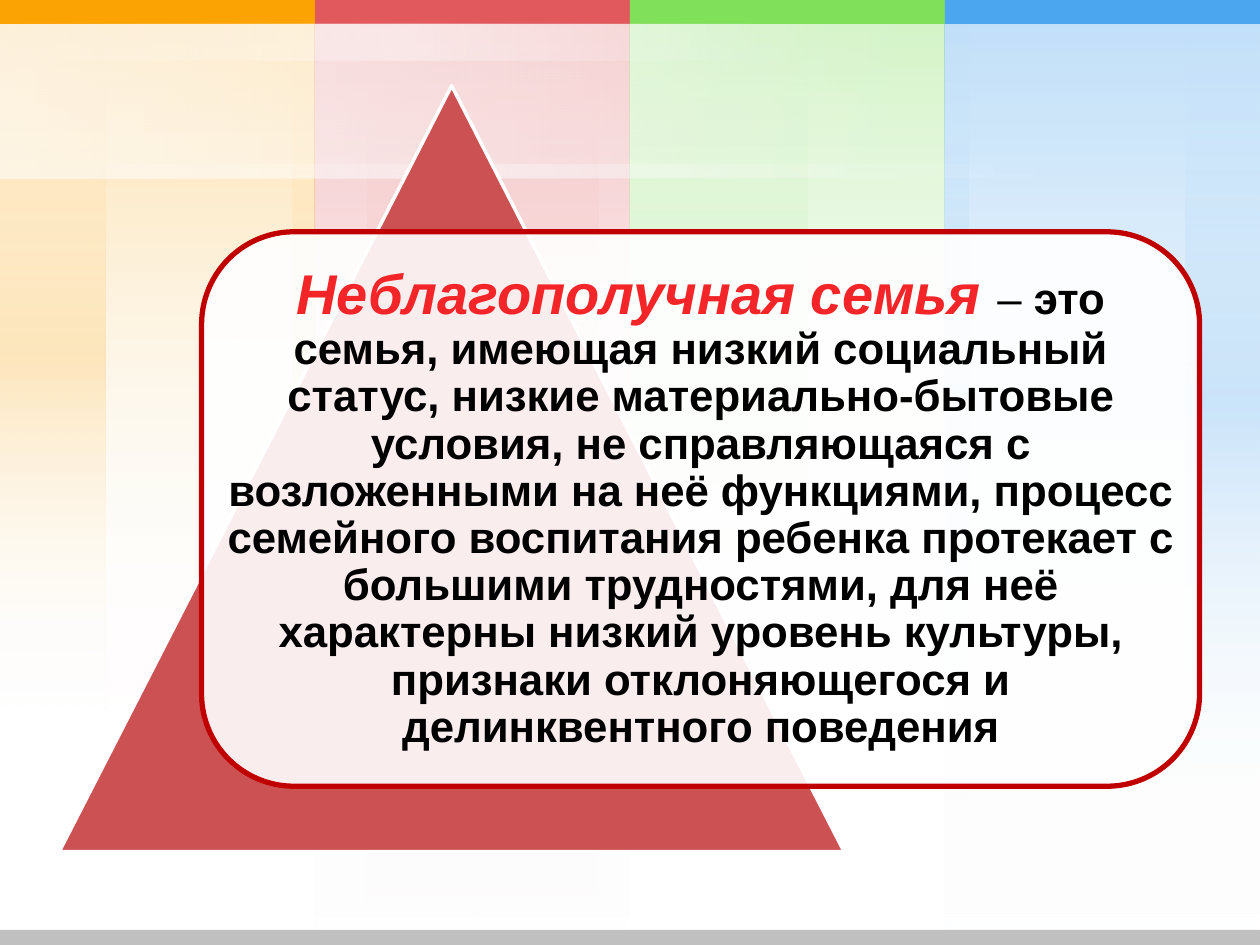
import pptx
import pptx.util
import pptx.oxml
import pptx.oxml.ns
import pptx.dml.color
import pptx.enum.shapes
import pptx.enum.text

Inches = pptx.util.Inches
Pt = pptx.util.Pt
RGBColor = pptx.dml.color.RGBColor
Shapes = pptx.enum.shapes.MSO_SHAPE

ORANGE = RGBColor(0xFC, 0xA3, 0x04)
ROSE = RGBColor(0xE1, 0x59, 0x5C)
GREEN = RGBColor(0x80, 0xE0, 0x5A)
BLUE = RGBColor(0x4B, 0xA5, 0xEF)
WHITE = RGBColor(0xFF, 0xFF, 0xFF)
GRAY = RGBColor(0xC0, 0xC0, 0xC0)
BRICK = RGBColor(0xCC, 0x51, 0x53)
DARK_RED = RGBColor(0xC0, 0x00, 0x00)
BRIGHT_RED = RGBColor(0xF3, 0x25, 0x28)
BLACK = RGBColor(0x00, 0x00, 0x00)

deck = pptx.Presentation()
deck.slide_width = Inches(10)
deck.slide_height = Inches(7.5)
page = deck.slides.add_slide(deck.slide_layouts[6])


def add_figure(kind, place, color, line=None, width=0):
    figure = page.shapes.add_shape(kind, *[Inches(value) for value in place])
    figure.shadow.inherit = False
    figure.fill.solid()
    figure.fill.fore_color.rgb = color
    if line is None:
        figure.line.fill.background()
    else:
        figure.line.color.rgb = line
        figure.line.width = Pt(width)
    return figure


def add_fade(place, color, alpha, middle=False, rotation=0):
    figure = add_figure(Shapes.RECTANGLE, place, color)
    figure.rotation = rotation
    stops = [(0, color, alpha), (100, WHITE, 0)]
    if middle:
        stops = [(0, WHITE, 0), (50, color, alpha), (100, WHITE, 0)]
    stop_xml = "".join(
        f'<a:gs pos="{position * 1000}"><a:srgbClr val="{shade}">'
        f'<a:alpha val="{opacity * 1000}"/></a:srgbClr></a:gs>'
        for position, shade, opacity in stops
    )
    gradient = pptx.oxml.parse_xml(
        f'<a:gradFill {pptx.oxml.ns.nsdecls("a")} rotWithShape="1">'
        f'<a:gsLst>{stop_xml}</a:gsLst><a:lin ang="5400000" scaled="0"/></a:gradFill>'
    )
    properties = figure.element.spPr
    properties.replace(properties.find(pptx.oxml.ns.qn("a:solidFill")), gradient)


column_fades = [
    (ROSE, 2.5, [(2.5, 2.5, 7.5, False), (2.92, 1.83, 7.5, True), (2.5, 2.5, 7.5, False)]),
    (GREEN, 5, [(5, 2.5, 5.62, False), (5, 1.41, 5.62, True), (5, 2.5, 5.62, False)]),
    (BLUE, 7.5, [(7.5, 0.19, 6.37, True), (7.5, 2.5, 7.47, False),
                 (9.41, 0.59, 6.37, True), (7.5, 2.5, 7.47, False)]),
    (ORANGE, 0, [(0, 2.5, 5.62, False), (2.32, 0.18, 5.62, True),
                 (0, 0.84, 5.62, True), (0, 2.5, 5.62, False)]),
]
for color, column_left, fades in column_fades:
    for left, width, height, middle in fades:
        add_fade((left, 0, width, height), color, 20, middle)

for color, column_left, fades in column_fades:
    add_figure(Shapes.RECTANGLE, (column_left, 0, 2.5, 0.19), color)

for place, middle in [
    ((4.16, -2.85, 0.1, 8.42), True),
    ((3.15, -2.95, 1.22, 7.51), False),
    ((3.06, -2.87, 0.29, 6.41), True),
    ((3.15, -2.95, 1.22, 7.51), False),
]:
    add_fade(place, WHITE, 35, middle, 270)

add_figure(Shapes.RECTANGLE, (0, 7.38, 10, 0.12), GRAY)
add_figure(Shapes.ISOSCELES_TRIANGLE, (0.47, 0.68, 6.23, 6.08), BRICK, WHITE, 2)

panel_place = (1.6, 1.84, 7.92, 4.4)
panel = add_figure(Shapes.ROUNDED_RECTANGLE, panel_place, WHITE, DARK_RED, 3)
panel_color = panel.element.spPr.find(pptx.oxml.ns.qn("a:solidFill"))[0]
panel_color.append(pptx.oxml.parse_xml(
    f'<a:alpha {pptx.oxml.ns.nsdecls("a")} val="90000"/>'))

box = page.shapes.add_textbox(*[Inches(value) for value in panel_place])
frame_format = {
    "word_wrap": True,
    "vertical_anchor": pptx.enum.text.MSO_ANCHOR.MIDDLE,
    "margin_left": Inches(0.13),
    "margin_right": Inches(0.13),
    "margin_top": Inches(0.13),
    "margin_bottom": Inches(0.13),
}
for name, value in frame_format.items():
    setattr(box.text_frame, name, value)

para = box.text_frame.paragraphs[0]
para.alignment = pptx.enum.text.PP_ALIGN.CENTER
para.line_spacing = 0.9

definition = (
    "это семья, имеющая низкий социальный статус, низкие материально-бытовые условия, "
    "не справляющаяся с возложенными на неё функциями, процесс семейного воспитания "
    "ребенка протекает с большими трудностями, для неё характерны низкий уровень "
    "культуры, признаки отклоняющегося и делинквентного поведения"
)
for text, color, font_format in [
    ("Неблагополучная семья ", BRIGHT_RED, {"size": Pt(32), "bold": True, "italic": True}),
    ("– ", BLACK, {"size": Pt(25), "bold": False, "italic": False}),
    (definition, BLACK, {"size": Pt(25), "bold": True, "italic": False}),
]:
    span = para.add_run()
    span.text = text
    span.font.name = "Arial"
    span.font.color.rgb = color
    for name, value in font_format.items():
        setattr(span.font, name, value)

deck.save("out.pptx")
